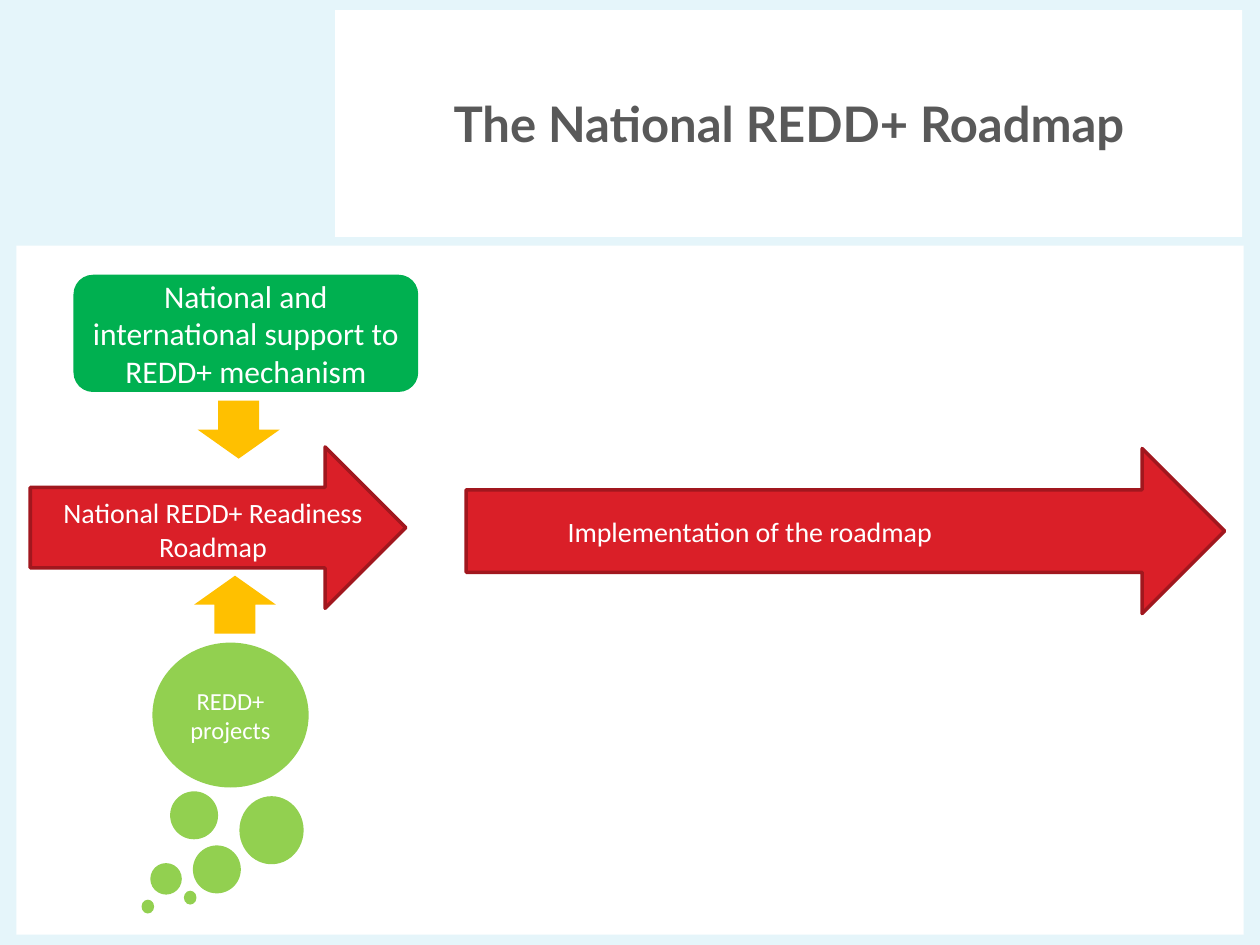
from lxml import etree
from pptx import Presentation
from pptx.dml.color import RGBColor
from pptx.enum import shapes, text
from pptx.util import Pt

WHITE = RGBColor(0xFF, 0xFF, 0xFF)
SKY = RGBColor(0xE5, 0xF5, 0xFA)
GREY = RGBColor(0x59, 0x59, 0x59)
RED = RGBColor(0xDA, 0x1F, 0x28)
MAROON = RGBColor(0xA1, 0x17, 0x1E)
LIME = RGBColor(0x92, 0xD0, 0x50)
GREEN = RGBColor(0x00, 0xB0, 0x50)
AMBER = RGBColor(0xFF, 0xC0, 0x00)
KIND = shapes.MSO_SHAPE


def draw(kind, box, fill):
    """Add a flat preset shape without outline."""
    shape = slide.shapes.add_shape(kind, *[Pt(n) for n in box])
    shape.shadow.inherit = False
    shape.fill.solid()
    shape.fill.fore_color.rgb = fill
    shape.line.fill.background()
    return shape


def write(shape, words, size, color=WHITE, face="Calibri", bold=False):
    """Set one centred, wrapped paragraph in a shape."""
    frame = shape.text_frame
    frame.word_wrap = True
    frame.vertical_anchor = text.MSO_ANCHOR.MIDDLE
    frame.text = words
    para = frame.paragraphs[0]
    para.alignment = text.PP_ALIGN.CENTER
    font = para.runs[0].font
    font.name, font.size, font.bold = face, Pt(size), bold
    font.color.rgb = color


deck = Presentation()
deck.slide_width, deck.slide_height = Pt(720), Pt(540)
slide = deck.slides.add_slide(deck.slide_layouts[5])
slide.background.fill.solid()
slide.background.fill.fore_color.rgb = SKY

# White panels, placed behind the title
title = slide.shapes.title
for box in [(9.4, 140.4, 701.3, 393.8), (191.5, 5.8, 518.4, 129.6)]:
    panel = draw(KIND.RECTANGLE, box, WHITE)
    title.element.addprevious(panel.element)

title.left, title.top = Pt(193), Pt(10)
title.width, title.height = Pt(515.5), Pt(121)
write(title, "The National REDD+ Roadmap", 28, GREY, "Lato", True)

# Roadmap stages
stages = [
    ((266.4, 256.3, 433.4, 94.3), (247, 290.2, 363, 26.6),
     "Implementation of the roadmap"),
    ((17.3, 255.4, 214.6, 92.2), (14.4, 279.4, 214.6, 46),
     "National REDD+ Readiness Roadmap"),
]
for box, place, words in stages:
    arrow = draw(KIND.RIGHT_ARROW, box, RED)
    arrow.line.color.rgb = MAROON
    arrow.line.width = Pt(2)
    label = slide.shapes.add_textbox(*[Pt(n) for n in place])
    write(label, words, 16)

# Projects feeding the roadmap from below
project = draw(KIND.OVAL, (87.1, 367.2, 89.3, 82.8), LIME)
write(project, "REDD+ projects", 14)
bubbles = [
    (136.8, 455, 36.7, 38.9),
    (97.2, 452.2, 27.4, 27.4),
    (110.2, 483.1, 27.4, 27.4),
    (85.9, 493.2, 18, 18),
    (105.1, 509, 7.2, 7.9),
    (80.9, 514.1, 7.2, 7.9),
]
for box in bubbles:
    draw(KIND.OVAL, box, LIME)
draw(KIND.UP_ARROW, (110.9, 329, 46.8, 33.1), AMBER)

# Support feeding the roadmap from above
support = draw(KIND.ROUNDED_RECTANGLE, (42, 157, 197, 67), GREEN)
write(support, "National and international support to REDD+ mechanism", 18)
draw(KIND.DOWN_ARROW, (113, 229, 46.8, 33.1), AMBER)

deck.save("out.pptx")
